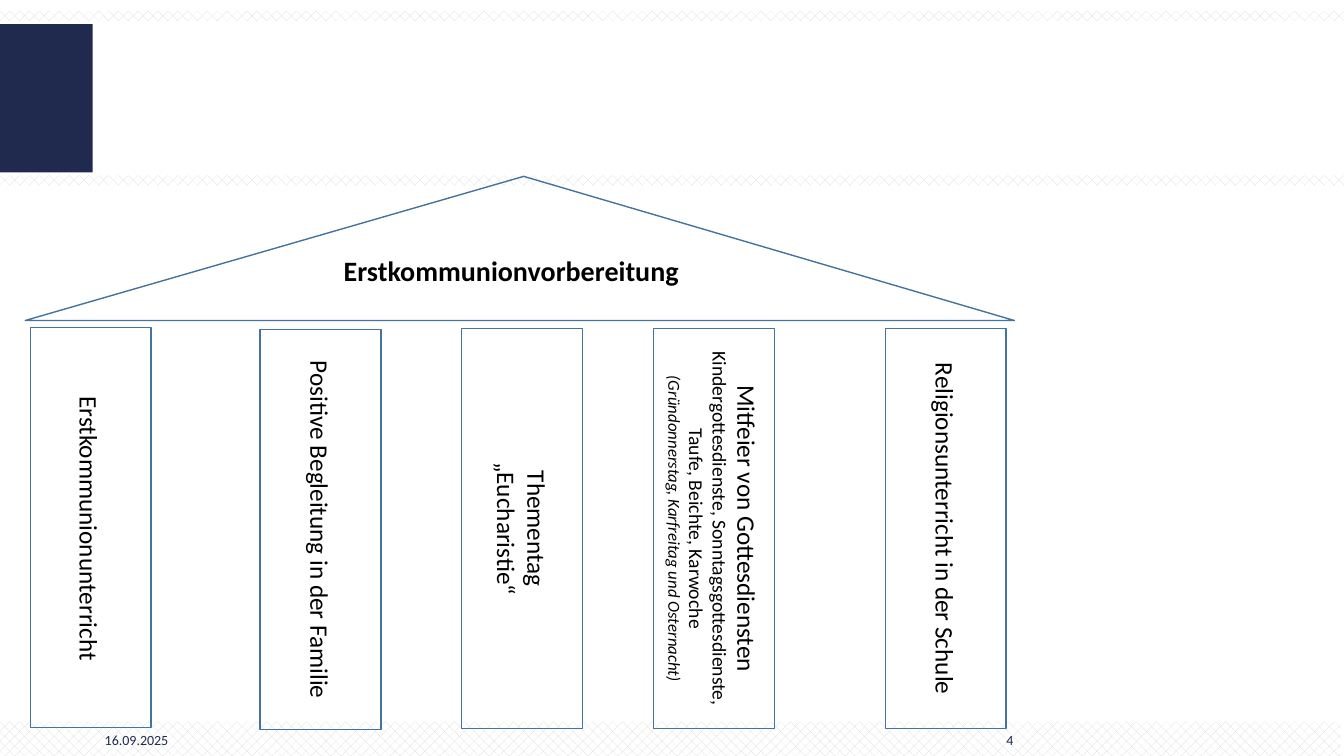
import pptx
import pptx.util
from pptx.dml.color import RGBColor
from pptx.enum.dml import MSO_PATTERN
from pptx.enum.shapes import MSO_SHAPE
from pptx.enum.text import MSO_ANCHOR, PP_ALIGN

Inches, Pt = pptx.util.Inches, pptx.util.Pt

NAVY = RGBColor(0x20, 0x2A, 0x4F)
OUTLINE = RGBColor(0x43, 0x73, 0x9E)
BLACK = RGBColor(0, 0, 0)
WHITE = RGBColor(0xFF, 0xFF, 0xFF)
PATTERN_GREY = RGBColor(0xD9, 0xD9, 0xD9)
FONT = "Calibri"

# Content: paragraphs hold lines, a line is (text, size, style)
ROOF_TITLE = [[("Erstkommunionvorbereitung", 20, "bold")]]
FIRST_PILLAR_LABEL = [[("Erstkommunionunterricht", 18, "")]]
PILLARS = [  # left, top, paragraphs
    (0.3, 3.25, []),
    (2.58, 3.27, [[("Positive Begleitung in der Familie", 18, "")]]),
    (4.58, 3.26, [[("Thementag", 18, "")], [("„Eucharistie“", 18, "")]]),
    (6.48, 3.26, [[
        ("Mitfeier von Gottesdiensten", 18, ""),
        ("Kindergottesdienste, Sonntagsgottesdienste, Taufe, Beichte, Karwoche", 14, ""),
        ("(Gründonnerstag, Karfreitag und Osternacht)", 12, "italic"),
    ]]),
    (8.78, 3.26, [[("Religionsunterricht in der Schule", 18, "")]]),
]
PILLAR_SIZE = (1.2, 3.97)
BANDS = [(0, 7.16, 13.3, 0.36), (0, 1.74, 13.33, 0.1), (0, 0.11, 13.33, 0.1)]
FOOTERS = [
    ((0.94, 7.19, 0.98, 0.31), "16.09.2025", PP_ALIGN.LEFT),
    ((9.58, 7.19, 0.57, 0.31), "4", PP_ALIGN.RIGHT),
]

deck = pptx.Presentation()
deck.slide_width, deck.slide_height = Inches(13.33), Inches(7.5)
slide = deck.slides.add_slide(deck.slide_layouts[6])


def add_block(preset, box):
    block = slide.shapes.add_shape(preset, *map(Inches, box))
    block.shadow.inherit = False
    block.fill.background()
    block.line.fill.background()
    return block


def outline(block):
    block.line.color.rgb = OUTLINE
    block.line.width = Pt(1)


def write(holder, paragraphs, align, color=BLACK, anchor=MSO_ANCHOR.MIDDLE, vertical=False):
    frame = holder.text_frame
    frame.word_wrap = True
    frame.vertical_anchor = anchor
    if vertical:
        frame._txBody.bodyPr.set("vert", "vert")
    for i, lines in enumerate(paragraphs):
        paragraph = frame.add_paragraph() if i else frame.paragraphs[0]
        paragraph.alignment = align
        for j, (text, size, style) in enumerate(lines):
            if j:
                paragraph.add_line_break()
            run = paragraph.add_run()
            run.text = text
            run.font.name, run.font.size = FONT, Pt(size)
            run.font.bold, run.font.italic = style == "bold", style == "italic"
            run.font.color.rgb = color


def add_label(box, paragraphs, align, **options):
    write(slide.shapes.add_textbox(*map(Inches, box)), paragraphs, align, **options)


# Patterned bands and navy block
for box in BANDS:
    band = add_block(MSO_SHAPE.RECTANGLE, box)
    band.fill.patterned()
    band.fill.pattern = MSO_PATTERN.PERCENT_30
    band.fill.fore_color.rgb = PATTERN_GREY
    band.fill.back_color.rgb = WHITE
navy_block = add_block(MSO_SHAPE.RECTANGLE, (0, 0.24, 0.92, 1.47))
navy_block.fill.solid()
navy_block.fill.fore_color.rgb = NAVY

# Date and page number
for box, text, align in FOOTERS:
    add_label(box, [[(text, 10, "")]], align, color=NAVY)

# Roof
roof = add_block(MSO_SHAPE.ISOSCELES_TRIANGLE, (0.25, 1.75, 9.81, 1.43))
roof.adjustments[0] = 0.504
outline(roof)
add_label((3.31, 2.47, 3.68, 0.44), ROOF_TITLE, PP_ALIGN.LEFT, anchor=MSO_ANCHOR.TOP)

# Pillars
for left, top, paragraphs in PILLARS:
    pillar = add_block(MSO_SHAPE.RECTANGLE, (left, top, *PILLAR_SIZE))
    outline(pillar)
    write(pillar, paragraphs, PP_ALIGN.CENTER, vertical=True)
add_label((0.59, 3.26, 0.5, 3.97), FIRST_PILLAR_LABEL, PP_ALIGN.CENTER,
          anchor=MSO_ANCHOR.TOP, vertical=True)

deck.save("out.pptx")
